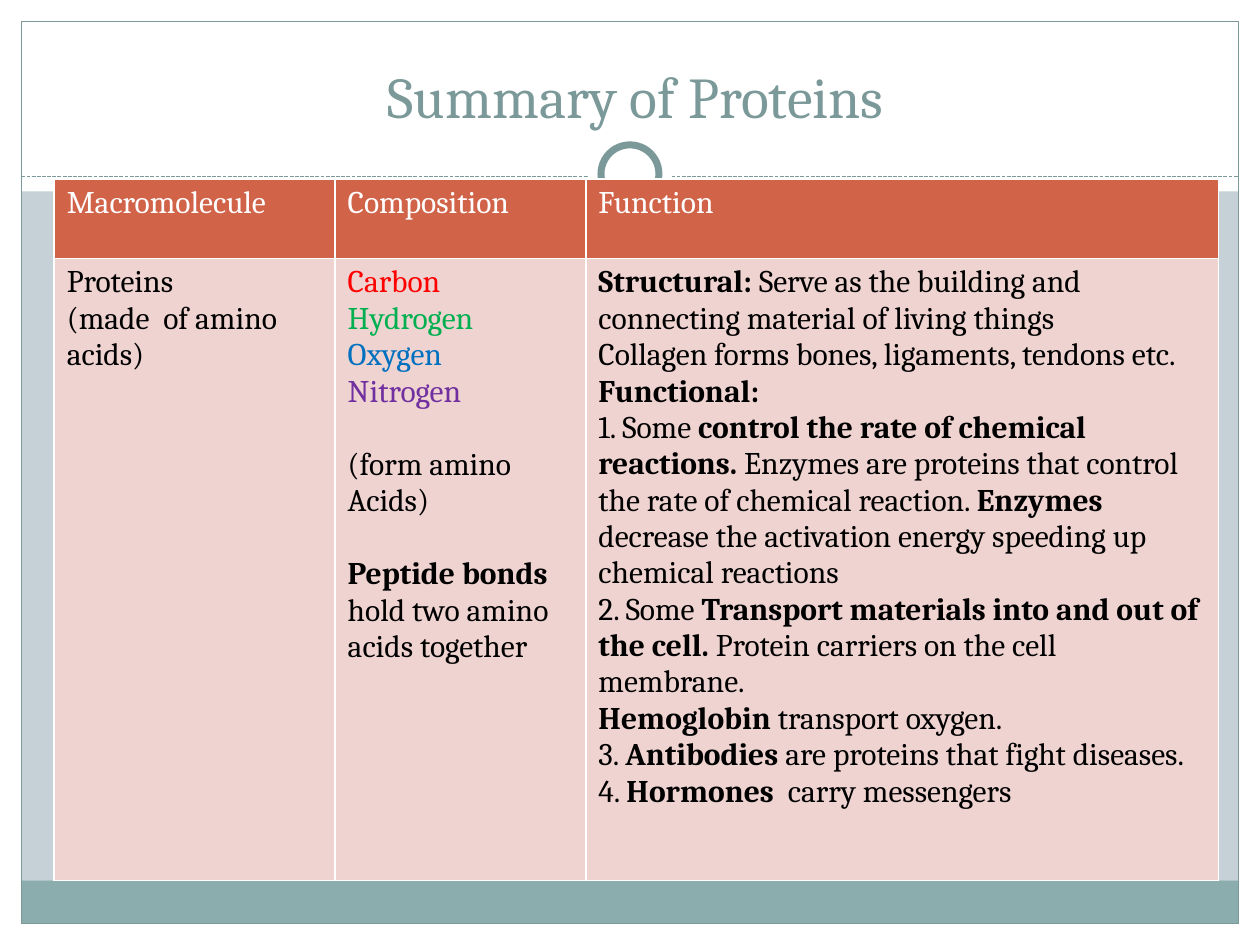
from dataclasses import dataclass
from typing import Optional

from lxml import etree
from pptx import Presentation
from pptx.dml.color import RGBColor
from pptx.enum.dml import MSO_LINE
from pptx.enum.shapes import MSO_CONNECTOR, MSO_SHAPE
from pptx.enum.text import MSO_ANCHOR, PP_ALIGN
from pptx.oxml.ns import qn
from pptx.util import Emu, Inches, Pt

RECTANGLE = MSO_SHAPE.RECTANGLE
OVAL = MSO_SHAPE.OVAL
STRAIGHT = MSO_CONNECTOR.STRAIGHT
DASHED = MSO_LINE.SQUARE_DOT
CENTER = PP_ALIGN.CENTER
BOTTOM = MSO_ANCHOR.BOTTOM

# The slide is a grid of square cells, 100 columns by 75 rows.
COLUMNS, ROWS = 100, 75
CELL = Inches(0.1)
MARGIN = 1.7
RULE_ROW = 14


@dataclass(frozen=True)
class Theme:
    font: str = "Cambria"
    title_size: float = 33
    body_size: float = 18
    blank_line: float = 21
    thin: float = 0.75
    border: float = 1
    ring: float = 4
    white: str = "FFFFFF"
    black: str = "000000"
    background: str = "C5D1D7"
    accent: str = "7C999A"
    footer: str = "8CADAE"
    header: str = "D16349"
    body: str = "EED3D0"
    carbon: str = "FF0000"
    hydrogen: str = "00B050"
    oxygen: str = "0070C0"
    nitrogen: str = "7030A0"


THEME = Theme()


@dataclass(frozen=True)
class Panel:
    left: float
    top: float
    width: float
    height: float
    fill: Optional[str] = THEME.white
    line: Optional[str] = None
    line_width: float = THEME.thin
    kind: MSO_SHAPE = RECTANGLE


@dataclass(frozen=True)
class Line:
    """One paragraph; text between ** marks is bold."""
    text: str
    color: str = THEME.black
    gap_before: bool = False


def circle(diameter: float, line: Optional[str] = None) -> Panel:
    """A white circle on the slide's middle, just below the dashed rule's level."""
    center_row = RULE_ROW - 0.2
    return Panel((COLUMNS - diameter) / 2, center_row - diameter / 2, diameter, diameter,
                 line=line, line_width=THEME.ring, kind=OVAL)


FRAME_WIDTH = COLUMNS - 2 * MARGIN
FRAME_HEIGHT = ROWS - 2 * MARGIN
FOOTER_HEIGHT = 3.4
FRAME = [
    Panel(0, ROWS - MARGIN, COLUMNS, MARGIN),
    Panel(0, 0, COLUMNS, 15.2),
    Panel(0, 0, MARGIN, ROWS),
    Panel(COLUMNS - MARGIN, 0, MARGIN, ROWS),
    Panel(MARGIN, ROWS - MARGIN - FOOTER_HEIGHT, FRAME_WIDTH, FOOTER_HEIGHT, THEME.footer),
    Panel(MARGIN, MARGIN, FRAME_WIDTH, FRAME_HEIGHT, None, THEME.accent),
]
RING = [circle(6.7), circle(4.6, THEME.accent)]

TABLE_LEFT, TABLE_TOP = 4.3, 14.2
COLUMN_WIDTHS = [22.3, 19.9, 50.2]
ROW_HEIGHTS = [6.3, 49.4]
HEADER = [[Line(text, THEME.white)] for text in ("Macromolecule", "Composition", "Function")]
PROTEINS = [
    [Line("Proteins"), Line("(made  of amino acids)")],
    [
        Line("Carbon", THEME.carbon),
        Line("Hydrogen", THEME.hydrogen),
        Line("Oxygen", THEME.oxygen),
        Line("Nitrogen", THEME.nitrogen),
        Line("(form amino", gap_before=True),
        Line("Acids)"),
        Line("**Peptide bonds **hold two amino acids together", gap_before=True),
    ],
    [
        Line("**Structural: **Serve as the building and connecting material of living things"),
        Line("Collagen forms bones, ligaments, tendons etc."),
        Line("**Functional:**"),
        Line("1. Some **control the rate of chemical reactions. **Enzymes are proteins that "
             "control the rate of chemical reaction. **Enzymes **decrease the activation "
             "energy speeding up chemical reactions"),
        Line("2. Some **Transport materials into and out of the cell. **Protein carriers "
             "on the cell membrane."),
        Line("**Hemoglobin **transport oxygen."),
        Line("3. **Antibodies **are proteins that fight diseases."),
        Line("4. **Hormones ** carry messengers"),
    ],
]


def units(count: float) -> Emu:
    return Emu(round(count * CELL))


def rgb(color: str) -> RGBColor:
    return RGBColor.from_string(color)


def style_run(run, size: float, color: str, bold: bool = False) -> None:
    run.font.name = THEME.font
    run.font.size = Pt(size)
    run.font.bold = bold
    run.font.color.rgb = rgb(color)


def draw_panel(slide, panel: Panel) -> None:
    shape = slide.shapes.add_shape(panel.kind, units(panel.left), units(panel.top),
                                   units(panel.width), units(panel.height))
    shape.shadow.inherit = False
    if panel.fill:
        shape.fill.solid()
        shape.fill.fore_color.rgb = rgb(panel.fill)
    else:
        shape.fill.background()
    if panel.line:
        shape.line.color.rgb = rgb(panel.line)
        shape.line.width = Pt(panel.line_width)
    else:
        shape.line.fill.background()


def draw_rule(slide) -> None:
    rule = slide.shapes.add_connector(STRAIGHT, units(MARGIN), units(RULE_ROW),
                                      units(COLUMNS - MARGIN), units(RULE_ROW))
    rule.line.color.rgb = rgb(THEME.accent)
    rule.line.width = Pt(THEME.thin)
    rule.line.dash_style = DASHED
    etree.SubElement(rule._element.spPr, qn("a:effectLst"))


def draw_title(slide) -> None:
    title = slide.shapes.add_textbox(units(3.3), units(2.5), units(93.3), units(8.3))
    frame = title.text_frame
    frame.word_wrap = True
    frame.vertical_anchor = BOTTOM
    frame.text = " Summary of Proteins"
    paragraph = frame.paragraphs[0]
    paragraph.alignment = CENTER
    style_run(paragraph.runs[0], THEME.title_size, THEME.accent)


def add_borders(cell) -> None:
    properties = cell._tc.get_or_add_tcPr()
    for side in ("a:lnL", "a:lnR", "a:lnT", "a:lnB"):
        line = etree.SubElement(properties, qn(side), w=str(Pt(THEME.border)))
        fill = etree.SubElement(line, qn("a:solidFill"))
        etree.SubElement(fill, qn("a:srgbClr"), val=THEME.white)


def fill_cell(cell, lines: list[Line], color: str) -> None:
    add_borders(cell)
    cell.fill.solid()
    cell.fill.fore_color.rgb = rgb(color)
    frame = cell.text_frame
    for index, line in enumerate(lines):
        paragraph = frame.add_paragraph() if index else frame.paragraphs[0]
        if line.gap_before:
            paragraph.space_before = Pt(THEME.blank_line)
        for part, text in enumerate(line.text.split("**")):
            if text:
                run = paragraph.add_run()
                run.text = text
                style_run(run, THEME.body_size, line.color, bold=part % 2 == 1)


def draw_table(slide) -> None:
    table = slide.shapes.add_table(len(ROW_HEIGHTS), len(COLUMN_WIDTHS), units(TABLE_LEFT),
                                   units(TABLE_TOP), units(sum(COLUMN_WIDTHS)),
                                   units(sum(ROW_HEIGHTS))).table
    for column, width in zip(table.columns, COLUMN_WIDTHS):
        column.width = units(width)
    contents = zip(table.rows, ROW_HEIGHTS, (HEADER, PROTEINS), (THEME.header, THEME.body))
    for row, height, texts, color in contents:
        row.height = units(height)
        for cell, lines in zip(row.cells, texts):
            fill_cell(cell, lines, color)


def main() -> None:
    presentation = Presentation()
    presentation.slide_width = units(COLUMNS)
    presentation.slide_height = units(ROWS)
    slide = presentation.slides.add_slide(presentation.slide_layouts[6])
    slide.background.fill.solid()
    slide.background.fill.fore_color.rgb = rgb(THEME.background)
    for panel in FRAME:
        draw_panel(slide, panel)
    draw_rule(slide)
    for panel in RING:
        draw_panel(slide, panel)
    draw_title(slide)
    draw_table(slide)
    presentation.save("out.pptx")


if __name__ == "__main__":
    main()
